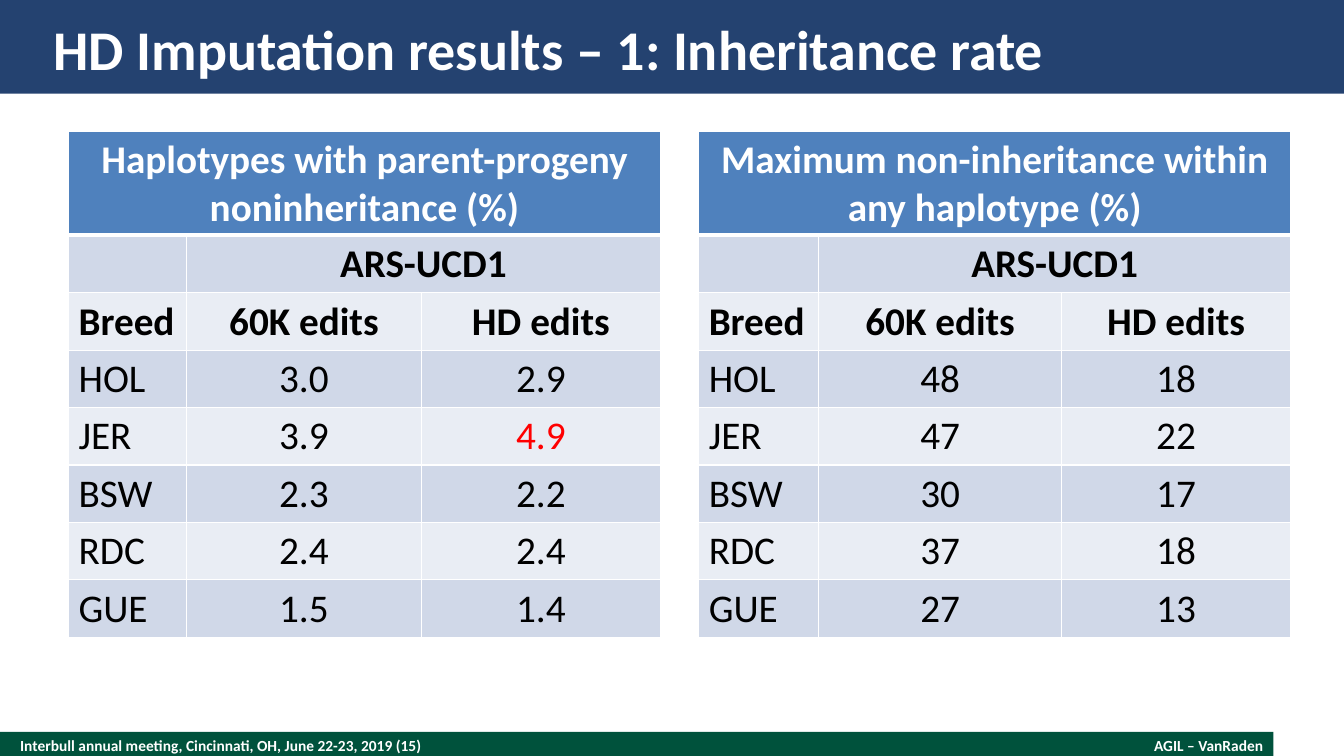
from lxml import etree
from pptx import Presentation
from pptx.dml.color import RGBColor
from pptx.enum import shapes, text
from pptx.oxml import ns
from pptx.util import Inches, Pt

HUES = {"navy": "244270", "green": "00523C", "head": "4F81BD", "dark": "D0D8E8",
        "light": "E9EDF4", "white": "FFFFFF", "black": "000000", "red": "FF0000"}
LEFT, MID, RIGHT = text.PP_ALIGN.LEFT, text.PP_ALIGN.CENTER, text.PP_ALIGN.RIGHT


def hue(name):
    return RGBColor.from_string(HUES[name])


def write(frame, words, size=28, color="black", bold=False, align=LEFT):
    para = frame.paragraphs[0]
    para.alignment = align
    run = para.add_run()
    run.text = words
    font = run.font
    font.name, font.size, font.bold = "Calibri", Pt(size), bold
    font.color.rgb = hue(color)


def edge(cell, top=1, base=1):
    """Draw white borders on a cell, with widths in points."""
    props = cell._tc.get_or_add_tcPr()
    for spot, (side, width) in enumerate(zip("LRTB", (1, 1, top, base))):
        line = etree.Element(ns.qn("a:ln" + side), w=str(Pt(width)))
        fill = etree.SubElement(line, ns.qn("a:solidFill"))
        etree.SubElement(fill, ns.qn("a:srgbClr"), val=HUES["white"])
        props.insert(spot, line)


class Deck:
    def __init__(self):
        self.show = Presentation()
        self.show.slide_width, self.show.slide_height = Inches(13.33), Inches(7.5)
        self.slide = self.show.slides.add_slide(self.show.slide_layouts[6])

    def band(self, box, color):
        shape = self.slide.shapes.add_shape(
            shapes.MSO_SHAPE.RECTANGLE, *map(Inches, box))
        shape.shadow.inherit = False
        shape.fill.solid()
        shape.fill.fore_color.rgb = hue(color)
        shape.line.fill.background()

    def label(self, box, words, **style):
        frame = self.slide.shapes.add_textbox(*map(Inches, box)).text_frame
        frame.word_wrap = True
        frame.vertical_anchor = text.MSO_ANCHOR.MIDDLE
        frame.margin_left = frame.margin_right = 0
        frame.margin_top = frame.margin_bottom = 0
        write(frame, words, color="white", bold=True, **style)

    def grid(self, left, widths, title, data, alert=None):
        """Add a breed table; alert is the (row, column) shown in red."""
        rows = [[title, "", ""], ["", "ARS-UCD1", ""],
                ["Breed", "60K edits", "HD edits"], *data]
        table = self.slide.shapes.add_table(
            len(rows), 3, Inches(left), Inches(1.3), Inches(sum(widths)),
            Inches(5)).table
        for col, width in zip(table.columns, widths):
            col.width = Inches(width)
        for r, row in enumerate(rows):
            table.rows[r].height = Inches(0.57 if r else 1.03)
            shade = ("dark" if r % 2 else "light") if r else "head"
            for c, words in enumerate(row):
                cell = table.cell(r, c)
                cell.fill.solid()
                cell.fill.fore_color.rgb = hue(shade)
                edge(cell, top=3 if r == 1 else 1, base=1 if r else 3)
                if words:
                    color = "red" if (r, c) == alert else "black"
                    write(cell.text_frame, words, bold=r < 3,
                          color=color if r else "white",
                          align=MID if c or not r else LEFT)
        table.cell(0, 0).merge(table.cell(0, 2))
        table.cell(1, 1).merge(table.cell(1, 2))


def main():
    deck = Deck()
    deck.band((0, 7.26, 12.63, 0.27), "green")
    deck.band((0, 0, 13.33, 0.93), "navy")
    deck.label((0.2, 7.26, 8.67, 0.27),
               "Interbull annual meeting, Cincinnati, OH, June 22-23, 2019 (15)",
               size=11)
    deck.label((9.6, 7.3, 2.93, 0.19), "AGIL – VanRaden", size=11, align=RIGHT)
    deck.label((0.53, 0.13, 12.27, 0.7),
               "HD Imputation results – 1: Inheritance rate", size=40)
    deck.grid(0.68, (1.17, 2.33, 2.37),
              "Haplotypes with parent-progeny noninheritance (%)",
              [("HOL", "3.0", "2.9"), ("JER", "3.9", "4.9"), ("BSW", "2.3", "2.2"),
               ("RDC", "2.4", "2.4"), ("GUE", "1.5", "1.4")], alert=(4, 2))
    deck.grid(6.93, (1.19, 2.41, 2.27),
              "Maximum non-inheritance within any haplotype (%)",
              [("HOL", "48", "18"), ("JER", "47", "22"), ("BSW", "30", "17"),
               ("RDC", "37", "18"), ("GUE", "27", "13")])
    deck.show.save("out.pptx")


if __name__ == "__main__":
    main()
